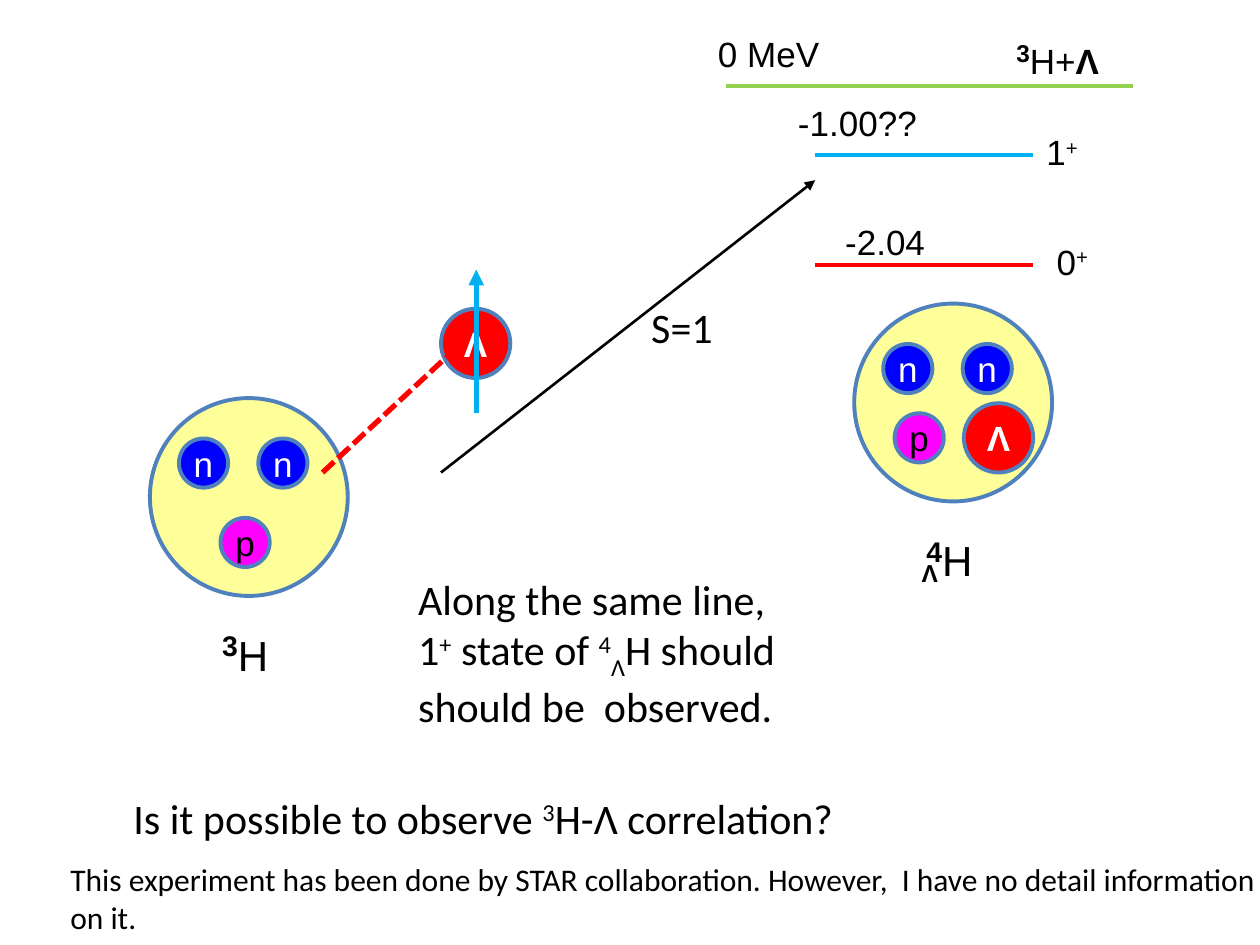
from lxml.etree import SubElement
from pptx import Presentation
from pptx.dml.color import RGBColor
from pptx.enum.dml import MSO_LINE
from pptx.enum.shapes import MSO_CONNECTOR, MSO_SHAPE
from pptx.enum.text import MSO_ANCHOR, MSO_AUTO_SIZE, PP_ALIGN
from pptx.oxml.ns import qn
from pptx.util import Pt

PX = 9144
BLACK = RGBColor(0, 0, 0)
WHITE = RGBColor(255, 255, 255)
RED = RGBColor(255, 0, 0)
BLUE = RGBColor(0, 0, 255)
MAGENTA = RGBColor(255, 0, 255)
YELLOW = RGBColor(0xFF, 0xFF, 0x99)
GREEN = RGBColor(0x92, 0xD0, 0x50)
CYAN = RGBColor(0x00, 0xB0, 0xF0)
OUTLINE = RGBColor(0x4F, 0x81, 0xBD)
SUPER = {"base": 30}
BOLD = {"bold": True}


def emu(*lengths):
    """Turn px lengths into EMU."""
    return [n * PX for n in lengths]


def add_run(p, text, size, font, color=BLACK, bold=False, base=0):
    """Append a formatted run, raised or lowered by base percent."""
    r = p.add_run()
    r.text = text
    r.font.size = Pt(size)
    r.font.name = font
    r.font.bold = bold
    r.font.color.rgb = color
    if base:
        r.font._element.set("baseline", str(base * 1000))


def add_text(slide, box, lines, size=20, font="Arial", align=PP_ALIGN.CENTER):
    """Add an unwrapped text box; each line is a list of (text, format) pairs."""
    tf = slide.shapes.add_textbox(*emu(*box)).text_frame
    tf.word_wrap = False
    tf.auto_size = MSO_AUTO_SIZE.SHAPE_TO_FIT_TEXT
    for i, line in enumerate(lines):
        p = tf.add_paragraph() if i else tf.paragraphs[0]
        p.alignment = align
        for text, fmt in line:
            add_run(p, text, **{"size": size, "font": font, **fmt})


def add_note(slide, box, lines, size=24):
    """Add left-aligned body text."""
    add_text(slide, box, lines, size, "Calibri", PP_ALIGN.LEFT)


def add_line(slide, start, end, color, width=2.25, dash=None, arrow=False):
    """Draw a straight line, optionally dashed or with an arrowhead at its end."""
    cn = slide.shapes.add_connector(MSO_CONNECTOR.STRAIGHT, *emu(*start, *end))
    cn.line.color.rgb = color
    cn.line.width = Pt(width)
    if dash:
        cn.line.dash_style = dash
    if arrow:
        SubElement(cn.line._get_or_add_ln(), qn("a:tailEnd"), type="triangle")
    SubElement(cn._element.spPr, qn("a:effectLst"))


def add_ball(slide, x, y, size, fill, text="", color=WHITE, bold=False):
    """Draw an outlined circle with an optional letter."""
    sp = slide.shapes.add_shape(MSO_SHAPE.OVAL, *emu(x, y, size, size))
    sp.shadow.inherit = False
    sp.fill.solid()
    sp.fill.fore_color.rgb = fill
    sp.line.color.rgb = OUTLINE
    sp.line.width = Pt(2.25)
    if text:
        tf = sp.text_frame
        tf.word_wrap = False
        tf.vertical_anchor = MSO_ANCHOR.MIDDLE
        p = tf.paragraphs[0]
        p.alignment = PP_ALIGN.CENTER
        add_run(p, text, 20, "Arial", color, bold)


def add_lambda(slide, x, y):
    """Draw a Λ particle."""
    add_ball(slide, x, y, 55, RED, "Λ", bold=True)


def add_nucleus(slide, x, y, proton, mass):
    """Draw a hydrogen nucleus with two neutrons, a proton and its symbol."""
    add_ball(slide, x, y, 157, YELLOW)
    for dx in (23, 86):
        add_ball(slide, x + dx, y + 32, 39, BLUE, "n")
    add_ball(slide, x + proton[0], y + proton[1], 39, MAGENTA, "p", BLACK)
    symbol = [(mass, {"size": 28, **BOLD, **SUPER}), ("H", {})]
    add_text(slide, (x + 46, y + 173, 59, 50), [symbol], 24)


def add_hypernucleus(slide, x, y):
    """Draw the bound nucleus that holds a Λ."""
    add_nucleus(slide, x, y, (32, 87), "4")
    add_lambda(slide, x + 87, y + 79)
    add_text(slide, (x + 40, y + 197, 40, 33), [[("Λ", BOLD)]], 14)


def add_levels(slide, x, y):
    """Draw the energy level diagram."""
    add_line(slide, (x + 16, y + 47), (x + 339, y + 47), GREEN)
    for dy, color in ((102, CYAN), (189, RED)):
        add_line(slide, (x + 87, y + dy), (x + 260, y + dy), color)
    threshold = [("3", {"size": 24, **BOLD, **SUPER}), ("H+", {}), ("Λ", BOLD)]
    labels = [
        ((226, 0, 107), threshold),
        ((-5, 0, 110), [("0 MeV", {})]),
        ((58, 55, 125), [("-1.00??", {})]),
        ((96, 149, 93), [("-2.04", {})]),
        ((255, 78, 56), [("1", {}), ("+", SUPER)]),
        ((263, 165, 56), [("0", {}), ("+", SUPER)]),
    ]
    for (dx, dy, w), line in labels:
        add_text(slide, (x + dx, y + dy, w, 43), [line])


def add_correlation(slide, x, y):
    """Draw the tritium nucleus, the Λ with its spin and the transition arrow."""
    add_nucleus(slide, x, y + 71, (56, 95), "3")
    add_lambda(slide, x + 231, y)
    add_line(slide, (x + 137, y + 130), (x + 239, y + 35), RED, 3, MSO_LINE.SQUARE_DOT)
    add_line(slide, (x + 259, y + 83), (x + 259, y - 31), CYAN, 3, arrow=True)
    add_line(slide, (x + 231, y + 130), (x + 528, y - 102), BLACK, 1.5, arrow=True)
    add_note(slide, (x + 388, y - 11, 69, 50), [[("S=1", {})]])


def add_remarks(slide, x, y):
    """Write the conclusions and the closing question."""
    state = [("1", {}), ("+", SUPER), (" state of ", {}), ("4", SUPER),
             ("Λ", {"base": -25}), ("H should", {})]
    add_note(slide, (x + 276, y, 311, 131),
             [[("Along the same line,", {})], state, [("should be  observed.", {})]])
    question = [("Is it possible to observe ", {}), ("3", SUPER), ("H-Λ correlation?", {})]
    add_note(slide, (x + 50, y + 174, 605, 50), [question])
    experiment = ("This experiment has been done by STAR collaboration. "
                  "However,  I have no detail information")
    add_note(slide, (x, y + 228, 972, 71), [[(experiment, {})], [("on it.", {})]], 18)


def main():
    """Build and save the slide."""
    prs = Presentation()
    prs.slide_width, prs.slide_height = emu(1000, 750)
    slide = prs.slides.add_slide(prs.slide_layouts[6])
    add_levels(slide, 560, 21)
    add_hypernucleus(slide, 678, 241)
    add_correlation(slide, 119, 245)
    add_remarks(slide, 46, 450)
    prs.save("out.pptx")


if __name__ == "__main__":
    main()
